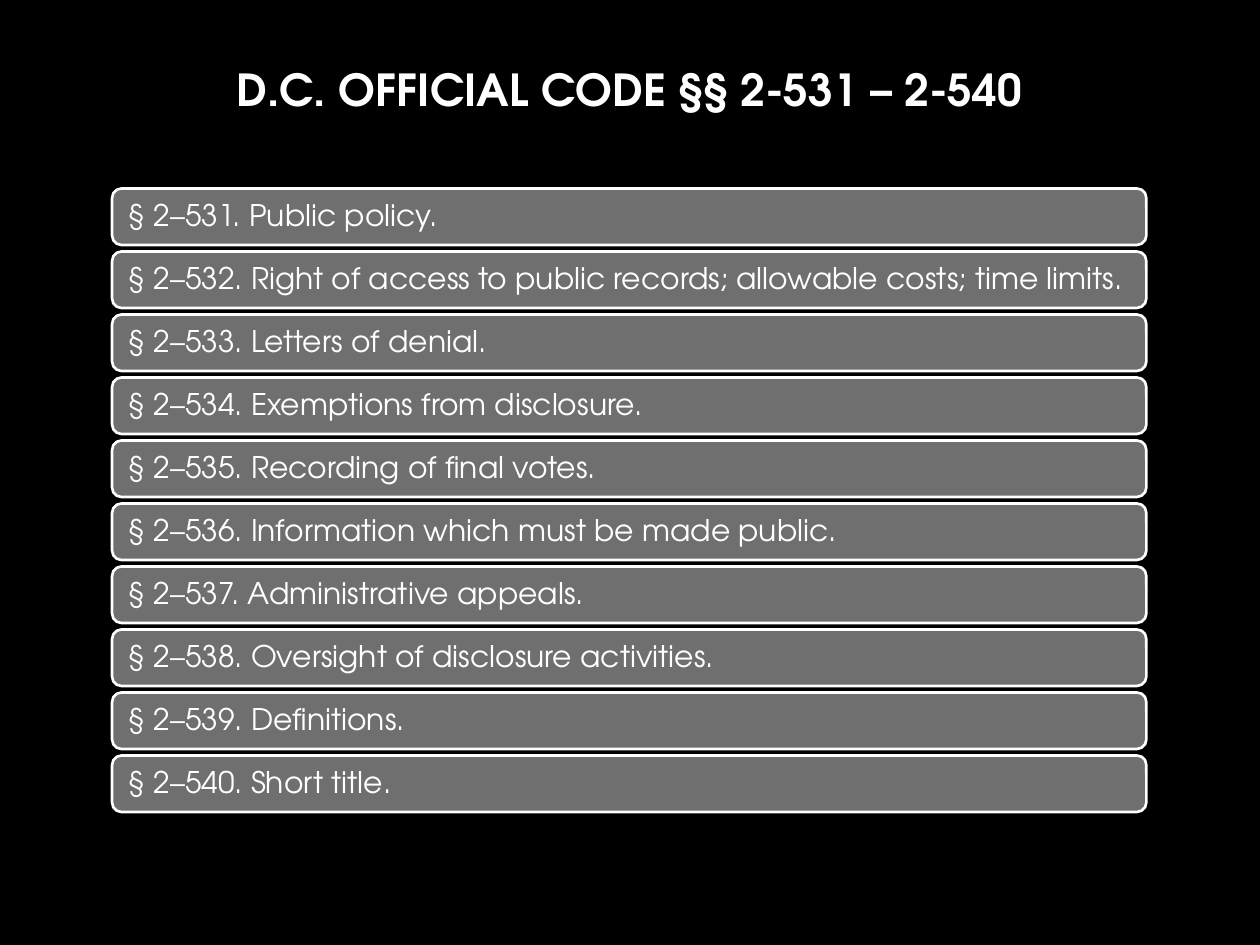
import dataclasses

import pptx
import pptx.dml.color
import pptx.enum.shapes
import pptx.enum.text
import pptx.util

Cm = pptx.util.Cm
Pt = pptx.util.Pt
RGB = pptx.dml.color.RGBColor


@dataclasses.dataclass(frozen=True)
class Theme:
    font: str = "TeX Gyre Adventor"
    background: RGB = RGB(0, 0, 0)
    text: RGB = RGB(255, 255, 255)
    bar: RGB = RGB(0x6F, 0x6F, 0x6F)
    title_size: Pt = Pt(25.2)
    section_size: Pt = Pt(17)
    outline: Pt = Pt(1.5)


@dataclasses.dataclass(frozen=True)
class Section:
    number: int
    heading: str

    @property
    def label(self) -> str:
        return f"§ 2–{self.number}. {self.heading}"


THEME = Theme()
LEFT, WIDTH = Cm(2.26), Cm(20.85)
TITLE_TOP, TITLE_HEIGHT = Cm(0.89), Cm(1.8)
FIRST_TOP, BAR_HEIGHT, PITCH = Cm(3.8), Cm(1.14), Cm(1.27)
INSET = Cm(0.25)
FIRST_NUMBER = 531
HEADINGS = (
    "Public policy.",
    "Right of access to public records; allowable costs; time limits.",
    "Letters of denial.",
    "Exemptions from disclosure.",
    "Recording of final votes.",
    "Information which must be made public.",
    "Administrative appeals.",
    "Oversight of disclosure activities.",
    "Definitions.",
    "Short title.",
)


def write(frame, words: str, size: Pt, align, bold: bool = False):
    frame.word_wrap = True
    frame.vertical_anchor = pptx.enum.text.MSO_ANCHOR.MIDDLE
    paragraph = frame.paragraphs[0]
    paragraph.alignment = align
    run = paragraph.add_run()
    run.text = words
    run.font.name = THEME.font
    run.font.size = size
    run.font.bold = bold
    run.font.color.rgb = THEME.text
    return paragraph


def draw_title(slide, words: str) -> None:
    title = slide.shapes.add_textbox(LEFT, TITLE_TOP, WIDTH, TITLE_HEIGHT)
    write(title.text_frame, words, THEME.title_size,
          pptx.enum.text.PP_ALIGN.CENTER, bold=True)


def draw_section(slide, section: Section, top: int) -> None:
    bar = slide.shapes.add_shape(
        pptx.enum.shapes.MSO_SHAPE.ROUNDED_RECTANGLE, LEFT, top, WIDTH, BAR_HEIGHT)
    bar.shadow.inherit = False
    bar.fill.solid()
    bar.fill.fore_color.rgb = THEME.bar
    bar.line.color.rgb = THEME.text
    bar.line.width = THEME.outline
    frame = bar.text_frame
    frame.margin_left = frame.margin_right = INSET
    paragraph = write(frame, section.label, THEME.section_size,
                      pptx.enum.text.PP_ALIGN.LEFT)
    paragraph.line_spacing = 0.9


def main() -> None:
    deck = pptx.Presentation()
    deck.slide_width, deck.slide_height = Cm(25.4), Cm(19.05)
    slide = deck.slides.add_slide(deck.slide_layouts[6])
    slide.background.fill.solid()
    slide.background.fill.fore_color.rgb = THEME.background
    draw_title(slide, "D.C. OFFICIAL CODE §§ 2-531 – 2-540")
    for row, heading in enumerate(HEADINGS):
        draw_section(slide, Section(FIRST_NUMBER + row, heading),
                     FIRST_TOP + row * PITCH)
    deck.save("out.pptx")


if __name__ == "__main__":
    main()
